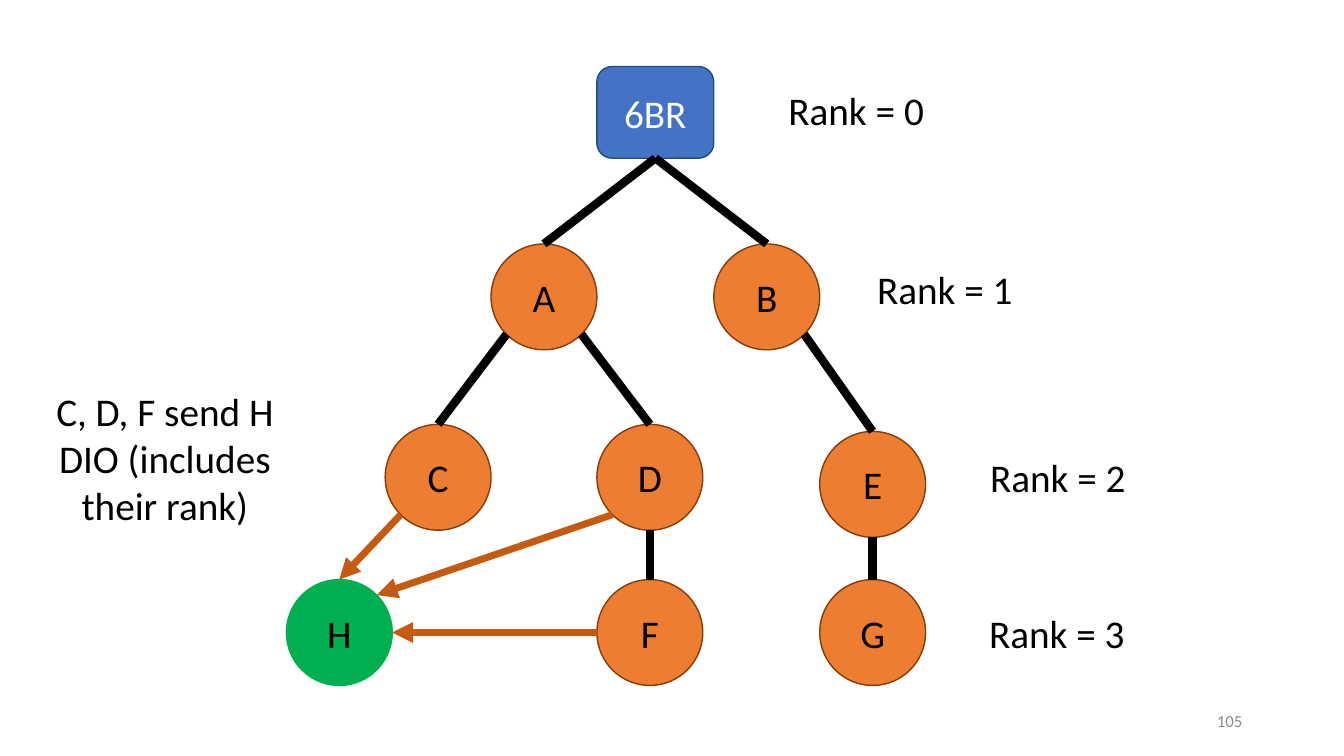
import math
from lxml import etree
from pptx import Presentation
from pptx import util as u
from pptx.dml.color import RGBColor
from pptx.enum import shapes, text
from pptx.oxml.ns import qn

HUES = {"black": "000000", "white": "FFFFFF", "grey": "8C8C8C",
        "blue": "4472C4", "navy": "1F4E79", "orange": "ED7D31",
        "brown": "843C0B", "green": "00B050", "rust": "C55A11"}
SIZE = 1.05

deck = Presentation()
deck.slide_width = u.Inches(13.33)
deck.slide_height = u.Inches(7.5)
slide = deck.slides.add_slide(deck.slide_layouts[6])


def hue(name):
    return RGBColor.from_string(HUES[name])


def write(shape, words, color="black", size=28, align=text.PP_ALIGN.CENTER):
    frame = shape.text_frame
    frame.word_wrap = True
    frame.vertical_anchor = text.MSO_ANCHOR.MIDDLE
    frame.text = words
    para = frame.paragraphs[0]
    para.alignment = align
    font = para.runs[0].font
    font.name = "Calibri"
    font.size = u.Pt(size)
    font.color.rgb = hue(color)


places = {"6BR": (5.92, 0.66), "A": (4.87, 2.42), "B": (7.08, 2.42),
          "C": (3.82, 4.21), "D": (5.92, 4.21), "E": (8.13, 4.28),
          "F": (5.92, 5.75), "G": (8.13, 5.75), "H": (2.84, 5.75)}
looks = {"6BR": ("blue", "navy", "white"), "H": ("green", "green", "black")}
nodes = {}
for name, (left, top) in places.items():
    fill, edge, ink = looks.get(name, ("orange", "brown", "black"))
    kind, wide, high = shapes.MSO_SHAPE.OVAL, SIZE, SIZE
    if name == "6BR":
        kind, wide, high = shapes.MSO_SHAPE.ROUNDED_RECTANGLE, 1.16, 0.91
    node = slide.shapes.add_shape(kind, u.Inches(left), u.Inches(top),
                                  u.Inches(wide), u.Inches(high))
    node.shadow.inherit = False
    node.fill.solid()
    node.fill.fore_color.rgb = hue(fill)
    node.line.color.rgb = hue(edge)
    node.line.width = u.Pt(1)
    frame = node.text_frame
    frame.margin_left = frame.margin_right = 0
    frame.margin_top = frame.margin_bottom = 0
    write(node, name, ink)
    nodes[name] = node

# name, angle in degrees clockwise from the right-hand side
links = [("6BR", 90, "A", 270), ("6BR", 90, "B", 270),
         ("A", 135, "C", 270), ("A", 45, "D", 270), ("B", 45, "E", 270),
         ("D", 90, "F", 270), ("E", 90, "G", 270),
         ("C", 135, "H", 270), ("D", 135, "H", 315), ("F", 180, "H", 0)]
for start, out, end, into in links:
    ends = []
    for name, turn in ((start, out), (end, into)):
        node, angle = nodes[name], math.radians(turn)
        ends.append(int(node.left + node.width / 2 * (1 + math.cos(angle))))
        ends.append(int(node.top + node.height / 2 * (1 + math.sin(angle))))
    link = slide.shapes.add_connector(shapes.MSO_CONNECTOR.STRAIGHT, *ends)
    if start == "6BR":
        link.begin_connect(nodes[start], 2)
    if into == 270:
        link.end_connect(nodes[end], 0)
    sent = end == "H"
    link.line.color.rgb = hue("rust" if sent else "black")
    link.line.width = u.Pt(5 if sent else 6)
    if sent:
        etree.SubElement(link.line._get_or_add_ln(), qn("a:tailEnd"), type="triangle")
    etree.SubElement(link._element.spPr, qn("a:effectLst"))

notes = [("Rank = 0 ", 7.65, 0.8, 1.77, 0.57),
         ("Rank = 1 ", 8.53, 2.58, 1.77, 0.57),
         ("Rank = 2 ", 9.65, 4.45, 1.77, 0.57),
         ("Rank = 3 ", 9.64, 5.99, 1.77, 0.57),
         ("C, D, F send H DIO (includes their rank)", 0.43, 3.79, 2.41, 1.51)]
for words, *area in notes:
    write(slide.shapes.add_textbox(*map(u.Inches, area)), words)

page = slide.shapes.add_textbox(*map(u.Inches, (9.42, 6.95, 3, 0.4)))
write(page, "105", "grey", 12, text.PP_ALIGN.RIGHT)

deck.save("out.pptx")
